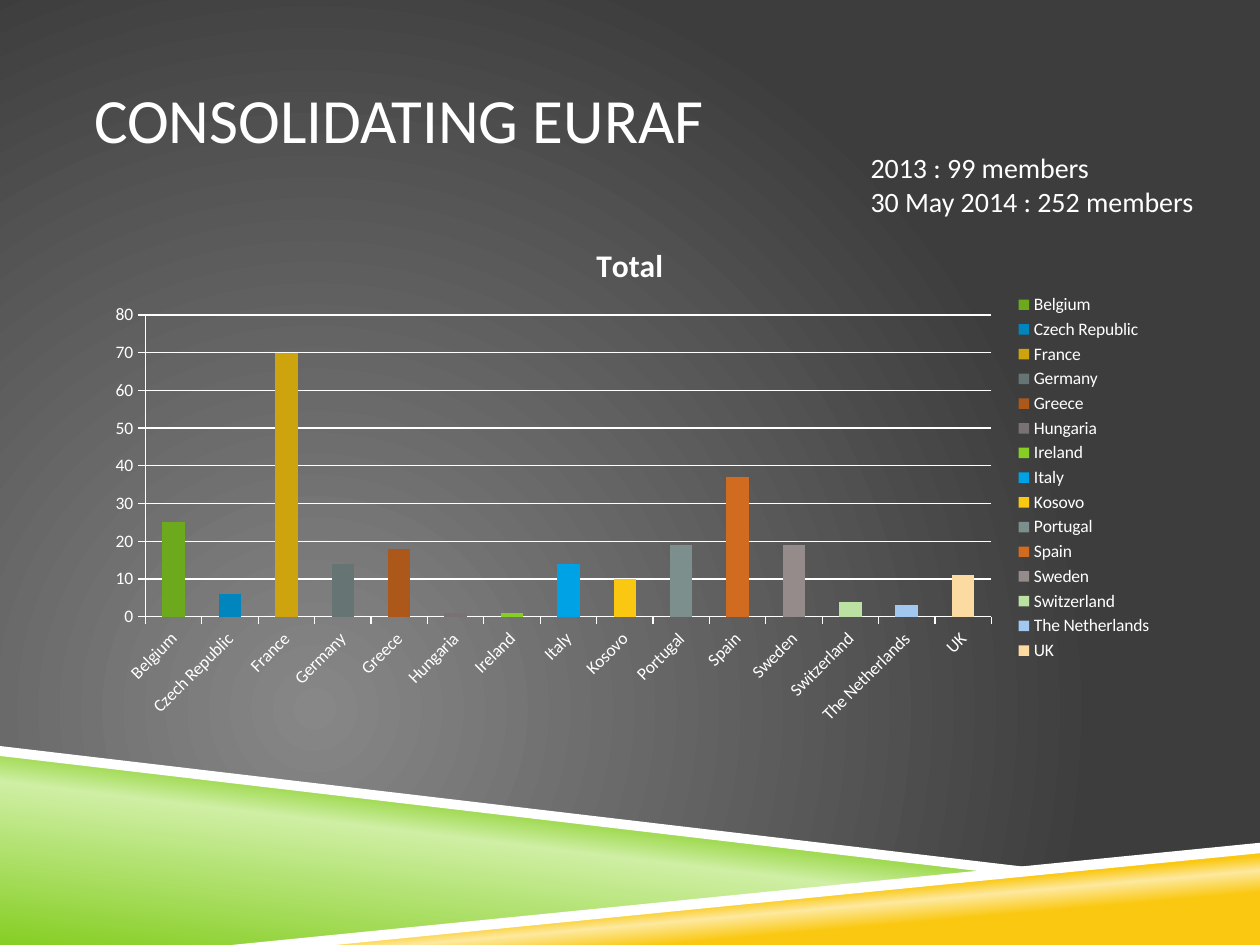
from typing import NamedTuple

from lxml.etree import SubElement as Sub
from pptx import Presentation
from pptx.chart.data import CategoryChartData as Data
from pptx.dml.color import RGBColor as Rgb
from pptx.enum.chart import XL_CHART_TYPE as Kind, XL_LEGEND_POSITION as Side, XL_TICK_MARK as Tick
from pptx.enum.text import MSO_ANCHOR as Anchor, PP_ALIGN as Align
from pptx.oxml.ns import qn
from pptx.util import Cm, Pt

FACE = "Calibri"
HEX = {
    "white": "FFFFFF", "ash": "878787", "coal": "3D3D3D",
    "green": "86CE24", "lime": "CFEFA4", "gold": "FAC810", "cream": "FDE99F",
}


class Band(NamedTuple):
    points: list
    color: str = "white"
    stops: tuple = ()
    angle: int = 0


class Bar(NamedTuple):
    land: str
    count: int
    color: str


BANDS = [
    Band([(0, 15.16), (20.12, 17.58), (5.08, 19.05), (0, 19.05)], "green",
         ((0, "green"), (52, "lime"), (66, "green")), 277),
    Band([(5.03, 19.05), (25.4, 17.07), (25.4, 19.05)], "gold",
         ((28, "gold"), (40, "cream"), (48, "gold")), 265),
    Band([(0, 15.04), (0, 15.24), (20.07, 17.6), (21.13, 17.53)]),
    Band([(25.4, 16.99), (4.67, 19.05), (6.76, 19.05), (25.4, 17.2)]),
]

BARS = [
    Bar("Belgium", 25, "6DA91D"),
    Bar("Czech Republic", 6, "0085BD"),
    Bar("France", 70, "CDA40D"),
    Bar("Germany", 14, "667573"),
    Bar("Greece", 18, "AB581A"),
    Bar("Hungaria", 1, "7A7272"),
    Bar("Ireland", 1, "86CE24"),
    Bar("Italy", 14, "00A2E6"),
    Bar("Kosovo", 10, "FAC810"),
    Bar("Portugal", 19, "7D8F8C"),
    Bar("Spain", 37, "D06B20"),
    Bar("Sweden", 19, "958B8B"),
    Bar("Switzerland", 4, "BBE2A3"),
    Bar("The Netherlands", 3, "A3C8F0"),
    Bar("UK", 11, "FCDBA2"),
]


def ink(name: str) -> Rgb:
    return Rgb.from_string(HEX[name])


def style(font, size: float, bold: bool = False) -> None:
    font.name, font.size, font.bold = FACE, Pt(size), bold
    font.color.rgb = ink("white")


def write(frame, text: str, *, size: float, bold: bool = False, align=Align.LEFT) -> None:
    frame.text = text
    for par in frame.paragraphs:
        par.alignment = align
        for run in par.runs:
            style(run.font, size, bold)


def place(shape, left: float, top: float, width: float, height: float) -> None:
    shape.left, shape.top = Cm(left), Cm(top)
    shape.width, shape.height = Cm(width), Cm(height)


def blend(root, stops: tuple, angle: int = 0, focus: tuple = ()) -> None:
    solid = next(root.iter(qn("a:solidFill")))
    grad = solid.makeelement(qn("a:gradFill"), {"rotWithShape": "1"})
    solid.getparent().replace(solid, grad)
    steps = Sub(grad, qn("a:gsLst"))
    for pos, name in stops:
        step = Sub(steps, qn("a:gs"), pos=str(pos * 1000))
        Sub(step, qn("a:srgbClr"), val=HEX[name])
    if focus:
        round_ = Sub(grad, qn("a:path"), path="circle")
        Sub(round_, qn("a:fillToRect"),
            {side: str(part * 1000) for side, part in zip("ltrb", focus)})
    else:
        Sub(grad, qn("a:lin"), ang=str(angle * 60000), scaled="0")


def draw_band(slide, band: Band) -> None:
    first, *rest = [(Cm(x), Cm(y)) for x, y in band.points]
    pen = slide.shapes.build_freeform(*first)
    pen.add_line_segments(rest)
    shape = pen.convert_to_shape()
    shape.shadow.inherit = False
    shape.line.fill.background()
    shape.fill.solid()
    shape.fill.fore_color.rgb = ink(band.color)
    if band.stops:
        blend(shape.element.spPr, band.stops, band.angle)


def draw_chart(slide, bars: list) -> None:
    data = Data()
    data.categories = [bar.land for bar in bars]
    data.add_series("Total", [bar.count for bar in bars])
    chart = slide.shapes.add_chart(
        Kind.COLUMN_CLUSTERED, Cm(1.9), Cm(4.45), Cm(21.59), Cm(10.36), data).chart
    style(chart.font, 10)
    write(chart.chart_title.text_frame, "Total", size=18, bold=True, align=Align.CENTER)
    chart.has_legend = True
    chart.legend.position = Side.RIGHT
    chart.legend.include_in_layout = False

    scale = chart.value_axis
    scale.minimum_scale, scale.maximum_scale, scale.major_unit = 0, 80, 10
    scale.has_major_gridlines = True
    for axis in (chart.category_axis, scale):
        axis.major_tick_mark = Tick.OUTSIDE
    for part in (chart.category_axis, scale, scale.major_gridlines):
        part.format.line.color.rgb = ink("white")
        part.format.line.width = Pt(0.75)

    plot = chart.plots[0]
    plot.gap_width = 150
    plot.vary_by_categories = True
    for spot, bar in enumerate(bars):
        fill = plot.series[0].points[spot].format.fill
        fill.solid()
        fill.fore_color.rgb = Rgb.from_string(bar.color)


def main() -> None:
    deck = Presentation()
    deck.slide_width, deck.slide_height = Cm(25.4), Cm(19.05)
    slide = deck.slides.add_slide(deck.slide_layouts[5])
    back = slide.background.fill
    back.solid()
    back.fore_color.rgb = ink("coal")
    blend(slide.element, ((0, "ash"), (100, "coal")), focus=(50, 100, 100, 50))

    for band in BANDS:
        draw_band(slide, band)

    title = slide.shapes.title
    place(title, 1.9, 0.76, 21.59, 3.23)
    frame = title.text_frame
    frame.margin_left = frame.margin_right = 0
    frame.vertical_anchor = Anchor.MIDDLE
    write(frame, "CONSOLIDATING EURAF", size=36)

    draw_chart(slide, BARS)

    note = slide.shapes.add_textbox(Cm(17.3), Cm(2.92), Cm(7.8), Cm(1.63))
    note.text_frame.word_wrap = True
    write(note.text_frame, "2013 : 99 members\n30 May 2014 : 252 members", size=16)
    deck.save("out.pptx")


if __name__ == "__main__":
    main()
